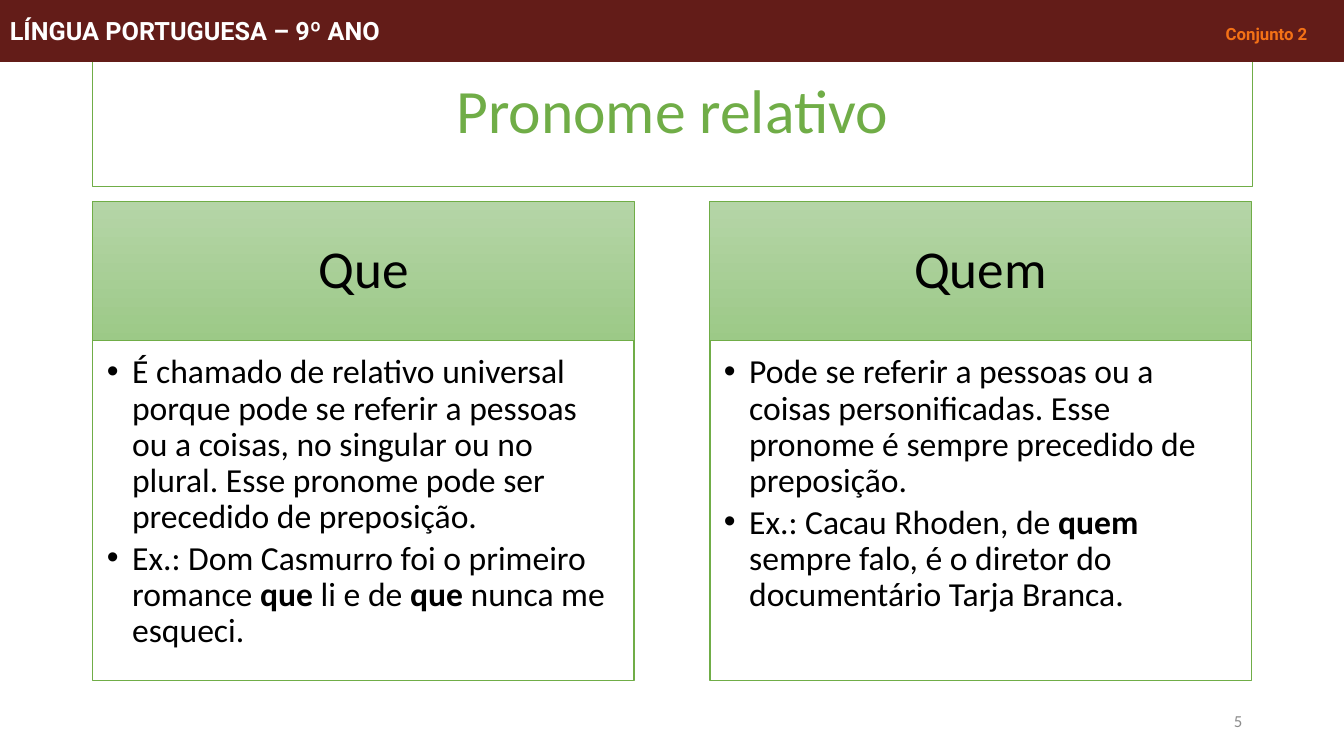
from lxml import etree
from pptx import Presentation
from pptx.dml.color import RGBColor
from pptx.enum.shapes import MSO_SHAPE
from pptx.enum.text import MSO_ANCHOR, MSO_AUTO_SIZE, PP_ALIGN
from pptx.oxml.ns import qn
from pptx.util import Inches, Pt

RECT = MSO_SHAPE.RECTANGLE
TOP, MIDDLE = MSO_ANCHOR.TOP, MSO_ANCHOR.MIDDLE
LEFT, CENTER, RIGHT = PP_ALIGN.LEFT, PP_ALIGN.CENTER, PP_ALIGN.RIGHT
COMPARISON_LAYOUT = 4

COLORS = {
    "green": "70AD47", "green_light": "B5D5A7", "green_deep": "9CC987",
    "maroon": "631C18", "orange": "F47116",
    "white": "FFFFFF", "black": "000000", "gray": "8C8C8C",
}

MARGIN, COLUMN_STEP, COLUMN_W = 0.92, 6.12, 5.37
HEADING_Y, HEADING_H = 2, 1.39
LIST_Y, LIST_H = 3.38, 3.37

# Heading and list of each column; ** encloses bold words
COLUMNS = [
    ("Que", [
        "É chamado de relativo universal porque pode se referir a pessoas ou a "
        "coisas, no singular ou no plural. Esse pronome pode ser precedido de "
        "preposição.",
        "Ex.: Dom Casmurro foi o primeiro romance **que** li e de **que** "
        "nunca me esqueci.",
    ]),
    ("Quem", [
        "Pode se referir a pessoas ou a coisas personificadas. Esse pronome é "
        "sempre precedido de preposição.",
        "Ex.: Cacau Rhoden, de **quem** sempre falo, é o diretor do "
        "documentário Tarja Branca.",
    ]),
]


def rgb(name):
    return RGBColor.from_string(COLORS[name])


def place(sp, x, y, w, h):
    sp.left, sp.top = Inches(x), Inches(y)
    sp.width, sp.height = Inches(w), Inches(h)


def outline(sp, color, width):
    sp.line.color.rgb = rgb(color)
    sp.line.width = Pt(width)


def setup_frame(sp, anchor, insets=(0.1, 0.05, 0.1, 0.05)):
    tf = sp.text_frame
    tf.word_wrap = True
    tf.auto_size = MSO_AUTO_SIZE.NONE
    tf.vertical_anchor = anchor
    (tf.margin_left, tf.margin_top,
     tf.margin_right, tf.margin_bottom) = map(Inches, insets)
    return tf


def format_run(r, size, color, bold=False, font="Calibri"):
    r.font.name, r.font.size, r.font.bold = font, Pt(size), bold
    r.font.color.rgb = rgb(color)


def format_paragraph(p, align, spacing=0.9, after=0):
    p.alignment, p.line_spacing = align, spacing
    p.space_before, p.space_after = Pt(0), Pt(after)


def add_bullet(p):
    pPr = p._p.get_or_add_pPr()
    pPr.set("marL", str(Inches(0.25)))
    pPr.set("indent", str(-Inches(0.25)))
    etree.SubElement(pPr, qn("a:buFont")).set("typeface", "Arial")
    etree.SubElement(pPr, qn("a:buChar")).set("char", "•")


def add_right_tab(p, x):
    tabs = etree.SubElement(p._p.get_or_add_pPr(), qn("a:tabLst"))
    tab = etree.SubElement(tabs, qn("a:tab"))
    tab.set("pos", str(Inches(x)))
    tab.set("algn", "r")


def set_line(tf, text, size, color, align, spacing=0.9):
    tf.text = text
    p = tf.paragraphs[0]
    format_paragraph(p, align, spacing)
    format_run(p.runs[0], size, color)


def fill_title(sp, text):
    place(sp, MARGIN, 0.4, 11.5, 1.45)
    outline(sp, "green", 0.75)
    set_line(setup_frame(sp, MIDDLE), text, 44, "green", CENTER)


def fill_heading(sp, x, text):
    place(sp, x, HEADING_Y, COLUMN_W, HEADING_H)
    sp.fill.gradient()
    sp.fill.gradient_angle = 270
    for stop, color in zip(sp.fill.gradient_stops, ("green_light", "green_deep")):
        stop.color.rgb = rgb(color)
    outline(sp, "green", 0.5)
    tf = setup_frame(sp, MIDDLE, (0.3, 0.17, 0.3, 0.17))
    set_line(tf, text, 38, "black", CENTER)


def fill_list(sp, x, items):
    place(sp, x, LIST_Y, COLUMN_W, LIST_H)
    sp.fill.solid()
    sp.fill.fore_color.rgb = rgb("white")
    outline(sp, "green", 1)
    tf = setup_frame(sp, TOP, (0.14, 0.14, 0.19, 0.21))
    for i, item in enumerate(items):
        p = tf.paragraphs[0] if i == 0 else tf.add_paragraph()
        format_paragraph(p, LEFT, after=3.6)
        add_bullet(p)
        for j, part in enumerate(item.split("**")):
            r = p.add_run()
            r.text = part
            format_run(r, 24, "black", bold=j % 2 == 1)


def add_page_number(slide, number):
    sp = slide.shapes.add_textbox(Inches(9.42), Inches(6.95), Inches(3), Inches(0.4))
    set_line(setup_frame(sp, MIDDLE), number, 12, "gray", RIGHT, 1.0)


def add_header(slide, subject, label):
    sp = slide.shapes.add_shape(RECT, 0, 0, Inches(13.33), Inches(0.61))
    sp.shadow.inherit = False
    sp.fill.solid()
    sp.fill.fore_color.rgb = rgb("maroon")
    outline(sp, "maroon", 0.75)
    p = setup_frame(sp, MIDDLE).paragraphs[0]
    format_paragraph(p, LEFT, 1.0)
    add_right_tab(p, 12.87)
    for text, size, color in ((subject + "\t", 18, "white"), (label, 12, "orange")):
        r = p.add_run()
        r.text = text
        format_run(r, size, color, bold=True, font="Roboto")


def main():
    prs = Presentation()
    prs.slide_width, prs.slide_height = Inches(13.33), Inches(7.5)
    slide = prs.slides.add_slide(prs.slide_layouts[COMPARISON_LAYOUT])

    # Title
    fill_title(slide.shapes.title, "Pronome relativo")

    # Two columns: heading and list
    for i, (heading, items) in enumerate(COLUMNS):
        x = MARGIN + i * COLUMN_STEP
        fill_heading(slide.placeholders[2 * i + 1], x, heading)
        fill_list(slide.placeholders[2 * i + 2], x, items)

    # Page number, and the header band over the title's top edge
    add_page_number(slide, "5")
    add_header(slide, "LÍNGUA PORTUGUESA – 9º ANO", "Conjunto 2")

    prs.save("out.pptx")


if __name__ == "__main__":
    main()
